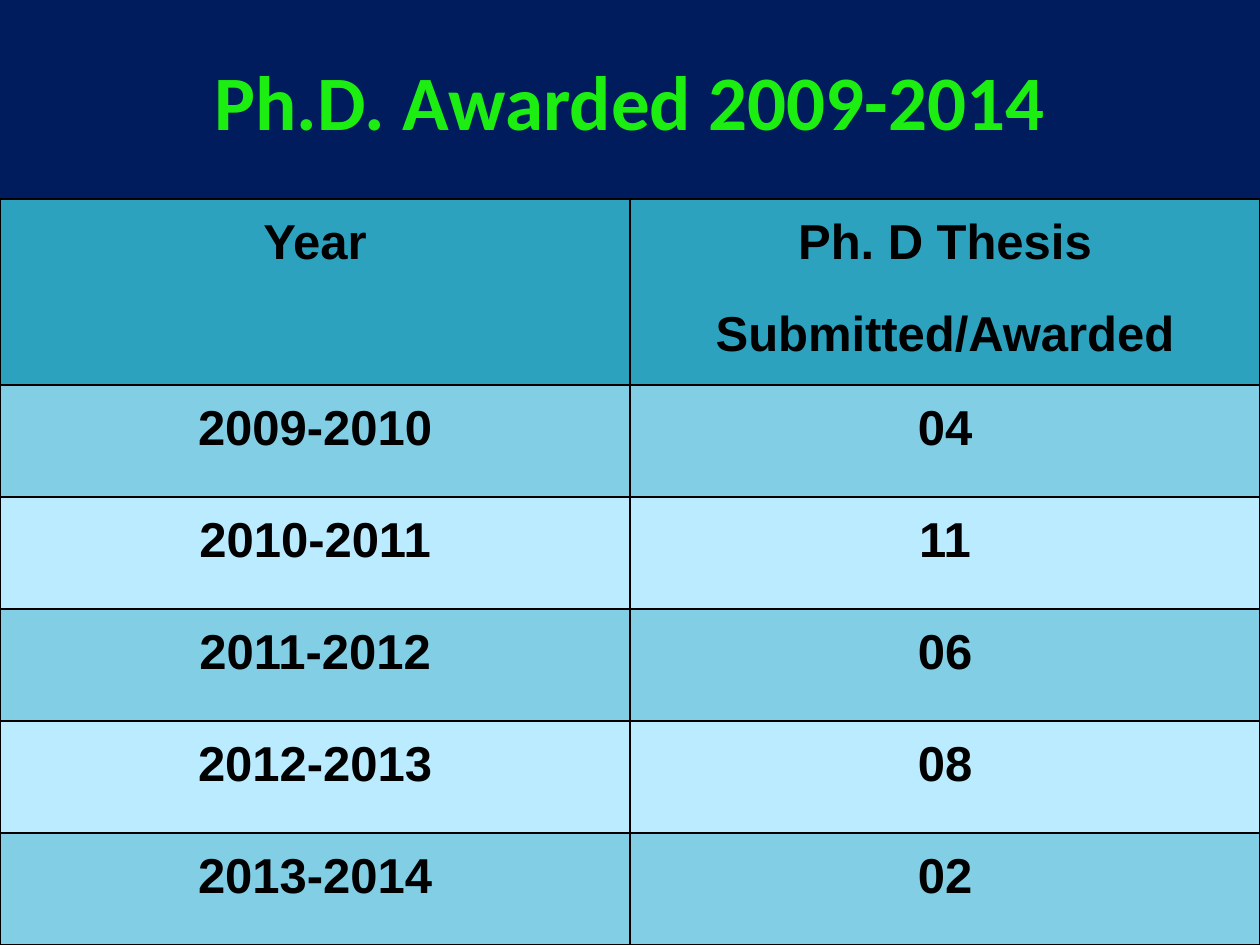
from lxml.etree import SubElement
from pptx import Presentation
from pptx.dml.color import RGBColor
from pptx.enum.text import MSO_ANCHOR, PP_ALIGN
from pptx.oxml.ns import qn
from pptx.util import Pt

EMU_PER_PX = 914400 / 126
SLIDE_WIDTH, SLIDE_HEIGHT = 1260, 945
TABLE_TOP, HEADER_HEIGHT, ROW_HEIGHT = 199, 186, 112
NAVY, GREEN, BLACK = "001C5D", "1CEE12", "000000"
HEADER_FILL, BAND_FILL, LIGHT_FILL = "2DA2BF", "82CEE5", "BAEBFF"
HEADER = (["Year"], ["Ph. D Thesis", "Submitted/Awarded"])
AWARDS = [
    ("2009-2010", "04"),
    ("2010-2011", "11"),
    ("2011-2012", "06"),
    ("2012-2013", "08"),
    ("2013-2014", "02"),
]


def px(length):
    return round(length * EMU_PER_PX)


def color(value):
    return RGBColor.from_string(value)


def paint(fill, value):
    fill.solid()
    fill.fore_color.rgb = color(value)


def add_run(para, text, font_name, size, value):
    para.alignment = PP_ALIGN.CENTER
    span = para.add_run()
    span.text = text
    span.font.name = font_name
    span.font.size = Pt(size)
    span.font.bold = True
    span.font.color.rgb = color(value)


def set_title(page, text):
    title = page.shapes.title
    title.left, title.top = px(63), px(21)
    title.width, title.height = px(1134), px(158)
    title.text_frame.vertical_anchor = MSO_ANCHOR.MIDDLE
    add_run(title.text_frame.paragraphs[0], text, "Calibri", 44, GREEN)


def add_borders(cell):
    """Draw a thin black line on all four sides; lines must precede the fill."""
    properties = cell._tc.get_or_add_tcPr()
    for side in ("a:lnL", "a:lnR", "a:lnT", "a:lnB"):
        line = SubElement(properties, qn(side), w=str(Pt(1)))
        solid = SubElement(line, qn("a:solidFill"))
        SubElement(solid, qn("a:srgbClr"), val=BLACK)


def fill_cell(cell, lines, fill):
    add_borders(cell)
    paint(cell.fill, fill)
    cell.margin_left = cell.margin_right = px(9)
    cell.margin_top = cell.margin_bottom = 0
    frame = cell.text_frame
    for index, text in enumerate(lines):
        para = frame.add_paragraph() if index else frame.paragraphs[0]
        para.line_spacing = 1.3
        para.space_before = Pt(4 if index else 0)
        para.space_after = Pt(8)
        add_run(para, text, "Arial", 28, BLACK)


def add_awards_table(page):
    rows = [HEADER] + [([year], [count]) for year, count in AWARDS]
    table = page.shapes.add_table(
        len(rows), len(HEADER), 0, px(TABLE_TOP),
        px(SLIDE_WIDTH), px(SLIDE_HEIGHT - TABLE_TOP),
    ).table
    for index, row in enumerate(rows):
        table.rows[index].height = px(ROW_HEIGHT if index else HEADER_HEIGHT)
        band = BAND_FILL if index % 2 else LIGHT_FILL
        for column, lines in enumerate(row):
            fill_cell(table.cell(index, column), lines, band if index else HEADER_FILL)


def main():
    deck = Presentation()
    deck.slide_width, deck.slide_height = px(SLIDE_WIDTH), px(SLIDE_HEIGHT)
    page = deck.slides.add_slide(deck.slide_layouts[5])
    paint(page.background.fill, NAVY)
    set_title(page, "Ph.D. Awarded 2009-2014")
    add_awards_table(page)
    deck.save("out.pptx")


if __name__ == "__main__":
    main()
